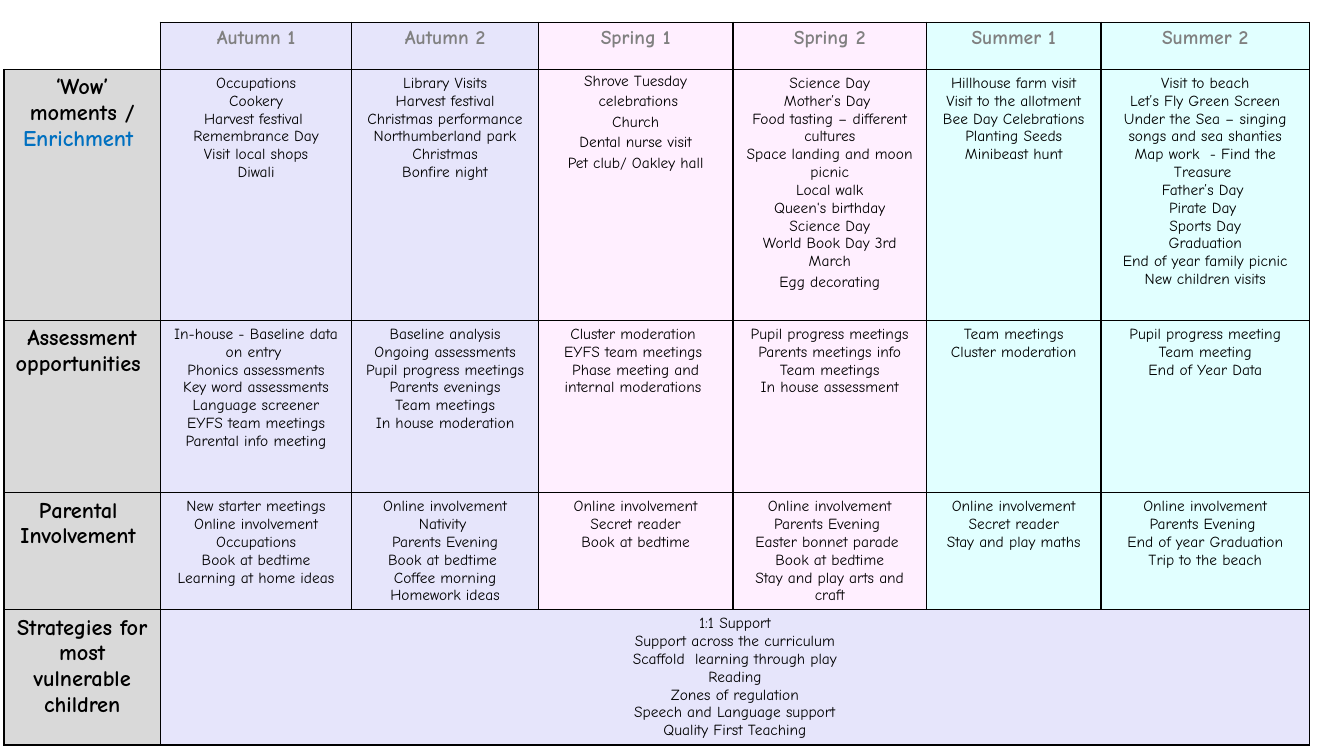
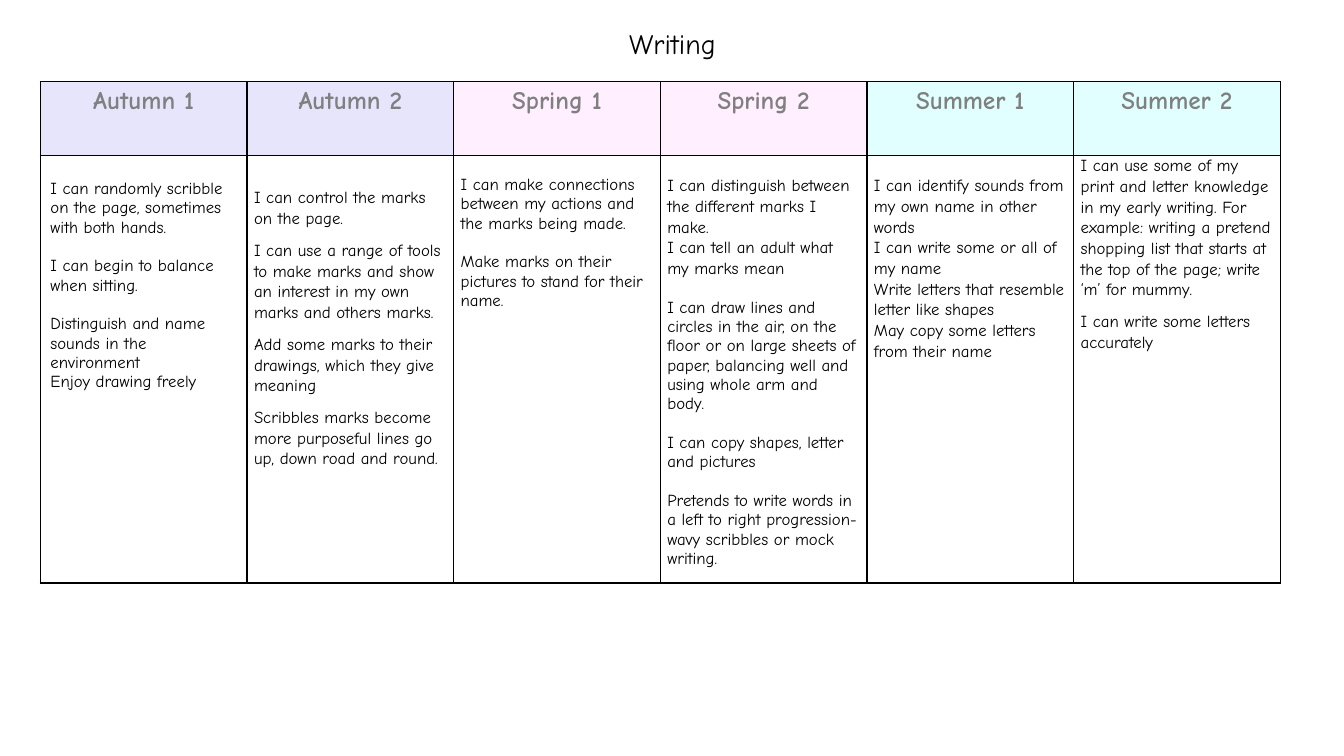
from lxml import etree
from pptx import Presentation
from pptx.dml.color import RGBColor
from pptx.enum import text
from pptx.oxml import ns
from pptx.util import Inches, Pt

FONT = "Comic Neue"
BLACK = RGBColor(0x00, 0x00, 0x00)
WHITE = RGBColor(0xFF, 0xFF, 0xFF)
HEADER_GREY = RGBColor(0x80, 0x80, 0x80)
LABEL_FILL = RGBColor(0xD9, 0xD9, 0xD9)
BLUE = RGBColor(0x00, 0x70, 0xC0)
LILAC = RGBColor(0xE6, 0xE5, 0xFB)
PINK = RGBColor(0xFF, 0xEF, 0xFF)
AQUA = RGBColor(0xE1, 0xFF, 0xFF)

TERMS = [(f"{season} {half}", fill)
         for season, fill in (("Autumn", LILAC), ("Spring", PINK), ("Summer", AQUA))
         for half in (1, 2)]

OVERVIEW_COLUMNS = [1.55, 1.9, 1.85, 1.93, 1.92, 1.73, 2.07]
OVERVIEW_ROWS = [0.47, 2.49, 1.71, 1.16, 1.34]

OVERVIEW = [
    ("‘Wow’ moments / ", [
        """Occupations
Cookery
Harvest festival 
Remembrance Day
Visit local shops
Diwali""",
        """Library Visits
Harvest festival
Christmas performance
Northumberland park
Christmas
Bonfire night""",
        """Shrove Tuesday
 celebrations
Church
Dental nurse visit
Pet club/ Oakley hall""",
        """Science Day
Mother’s Day 
Food tasting – different cultures
Space landing and moon picnic
Local walk
Queen's birthday
Science Day
World Book Day 3rd March
Egg decorating""",
        """Hillhouse farm visit
Visit to the allotment
Bee Day Celebrations
Planting Seeds
Minibeast hunt""",
        """Visit to beach
Let’s Fly Green Screen
Under the Sea – singing songs and sea shanties
Map work  - Find the Treasure 
Father’s Day 
Pirate Day 
Sports Day
Graduation
End of year family picnic
New children visits""",
    ]),
    ("Assessment opportunities ", [
        """In-house - Baseline data on entry 
Phonics assessments
Key word assessments
Language screener
EYFS team meetings
Parental info meeting""",
        """Baseline analysis
Ongoing assessments
Pupil progress meetings
Parents evenings
Team meetings
In house moderation""",
        """Cluster moderation 
EYFS team meetings 
Phase meeting and internal moderations """,
        """Pupil progress meetings
Parents meetings info
Team meetings
In house assessment""",
        """Team meetings
Cluster moderation""",
        """Pupil progress meeting
Team meeting
End of Year Data""",
    ]),
    ("Parental \nInvolvement ", [
        """New starter meetings
Online involvement
Occupations
Book at bedtime
Learning at home ideas""",
        """Online involvement
Nativity 
Parents Evening
Book at bedtime 
Coffee morning
Homework ideas""",
        """Online involvement
Secret reader
Book at bedtime""",
        """Online involvement
Parents Evening 
Easter bonnet parade 
Book at bedtime
Stay and play arts and craft""",
        """Online involvement
Secret reader
Stay and play maths""",
        """Online involvement
Parents Evening 
End of year Graduation
Trip to the beach""",
    ]),
]

STRATEGIES = """1:1 Support
Support across the curriculum
Scaffold  learning through play
Reading
Zones of regulation
Speech and Language support
Quality First Teaching"""

# Each goal column: top inset, side inset, line spacing, gap between blocks, text
LINE_GAP = 13.8
WRITING_GOALS = [
    (0.24, 0.1, 1.0, LINE_GAP,
     """I can randomly scribble on the page, sometimes with both hands.

I can begin to balance when sitting.

Distinguish and name sounds in the environment
Enjoy drawing freely"""),
    (0.32, 0.07, 1.07, 8,
     """I can control the marks on the page.

I can use a range of tools to make marks and show an interest in my own marks and others marks.

Add some marks to their drawings, which they give meaning

Scribbles marks become more purposeful lines go up, down road and round."""),
    (0.2, 0.07, 1.0, LINE_GAP,
     """I can make connections between my actions and the marks being made.

Make marks on their pictures to stand for their name."""),
    (0.2, 0.07, 1.07, LINE_GAP,
     """I can distinguish between the different marks I make.
I can tell an adult what my marks mean

I can draw lines and circles in the air, on the floor or on large sheets of paper, balancing well and using whole arm and body.

I can copy shapes, letter and pictures

Pretends to write words in a left to right progression- wavy scribbles or mock writing."""),
    (0.2, 0.07, 1.07, LINE_GAP,
     """I can identify sounds from my own name in other words
I can write some or all of my name
Write letters that resemble letter like shapes
May copy some letters from their name"""),
    (0, 0.07, 1.07, 8,
     """I can use some of my print and letter knowledge in my early writing. For example: writing a pretend shopping list that starts at the top of the page; write ‘m’ for mummy.

I can write some letters accurately"""),
]


class Deck:
    def __init__(self):
        self.presentation = Presentation()
        self.presentation.slide_width = Inches(13.33)
        self.presentation.slide_height = Inches(7.5)
        self.slide = None

    def new_slide(self):
        self.slide = self.presentation.slides.add_slide(self.presentation.slide_layouts[6])

    def fill_text(self, frame, words, size, color=BLACK, bold=False, centered=True,
                  spacing=1.0, gap=0):
        """Fill a text frame line by line; an empty line in words becomes a gap in points."""
        first = True
        for block in words.split("\n\n"):
            for index, line in enumerate(block.split("\n")):
                paragraph = frame.paragraphs[0] if first else frame.add_paragraph()
                paragraph.text = line
                paragraph.alignment = text.PP_ALIGN.CENTER if centered else text.PP_ALIGN.LEFT
                paragraph.line_spacing = spacing
                if index == 0 and not first:
                    paragraph.space_before = Pt(gap)
                font = paragraph.font
                font.name, font.size, font.bold = FONT, Pt(size), bold
                font.color.rgb = color
                first = False

    def title(self, words):
        box = self.slide.shapes.add_textbox(Inches(0.92), Inches(0.05), Inches(11.5), Inches(0.6))
        frame = box.text_frame
        frame.word_wrap = True
        frame.vertical_anchor = text.MSO_ANCHOR.BOTTOM
        self.fill_text(frame, words, 20, spacing=0.9)

    def table(self, left, top, columns, rows):
        frame = self.slide.shapes.add_table(
            len(rows), len(columns), Inches(left), Inches(top),
            Inches(sum(columns)), Inches(sum(rows)))
        table = frame.table
        table.first_row = table.horz_banding = False
        for column, width in zip(table.columns, columns):
            column.width = Inches(width)
        for row, height in zip(table.rows, rows):
            row.height = Inches(height)
        return table

    def cell(self, cell, fill, words="", size=11, sides="LRTB", margins=None, **style):
        """Fill, border and letter one cell; margins are the side and top insets."""
        cell.fill.solid()
        cell.fill.fore_color.rgb = fill
        self.borders(cell, sides)
        if margins:
            side, top = margins
            cell.margin_left = cell.margin_right = Inches(side)
            cell.margin_top, cell.margin_bottom = Inches(top), 0
        if words:
            self.fill_text(cell.text_frame, words, size, **style)

    def borders(self, cell, sides):
        properties = cell._tc.get_or_add_tcPr()
        for index, side in enumerate(sides):
            line = etree.Element(ns.qn(f"a:ln{side}"), w=str(Pt(1)))
            solid = etree.SubElement(line, ns.qn("a:solidFill"))
            etree.SubElement(solid, ns.qn("a:srgbClr"), val=str(BLACK))
            properties.insert(index, line)

    def term_headers(self, table, first_column, size):
        for column, (term, fill) in enumerate(TERMS, first_column):
            self.cell(table.cell(0, column), fill, term, size, color=HEADER_GREY, bold=True)


def overview_slide(deck):
    deck.new_slide()
    table = deck.table(0.04, 0.22, OVERVIEW_COLUMNS, OVERVIEW_ROWS)
    deck.cell(table.cell(0, 0), WHITE, sides="RB")
    deck.term_headers(table, 1, 14)

    for row, (label, entries) in enumerate(OVERVIEW, 1):
        deck.cell(table.cell(row, 0), LABEL_FILL, label, 16, bold=True)
        for column, (entry, (_, fill)) in enumerate(zip(entries, TERMS), 1):
            loose = (row, column) == (1, 3)
            deck.cell(table.cell(row, column), fill, entry,
                      spacing=1.15 if loose else 1.0,
                      margins=(0.07, 0) if loose else None)
    table.cell(1, 4).text_frame.paragraphs[-1].line_spacing = 1.15
    enrichment = table.cell(1, 0).text_frame.paragraphs[0].add_run()
    enrichment.text = "Enrichment "
    enrichment.font.color.rgb = BLUE

    last = len(OVERVIEW_ROWS) - 1
    deck.cell(table.cell(last, 0), LABEL_FILL,
              "Strategies for most vulnerable children", 16, bold=True)
    table.cell(last, 1).merge(table.cell(last, len(TERMS)))
    deck.cell(table.cell(last, 1), LILAC, STRATEGIES)
    for column in range(2, len(TERMS) + 1):
        deck.cell(table.cell(last, column), LILAC, sides="RTB")


def writing_slide(deck):
    deck.new_slide()
    deck.title("Writing")
    table = deck.table(0.4, 0.81, [2.05] * len(TERMS), [0.73, 4.1])
    deck.term_headers(table, 0, 18)
    for column, (top, side, spacing, gap, goals) in enumerate(WRITING_GOALS):
        deck.cell(table.cell(1, column), WHITE, goals, 12, margins=(side, top),
                  centered=False, spacing=spacing, gap=gap)
    for paragraph in table.cell(1, 3).text_frame.paragraphs[2:]:
        paragraph.line_spacing = 1.0


def main():
    deck = Deck()
    overview_slide(deck)
    writing_slide(deck)
    deck.presentation.save("out.pptx")


if __name__ == "__main__":
    main()
